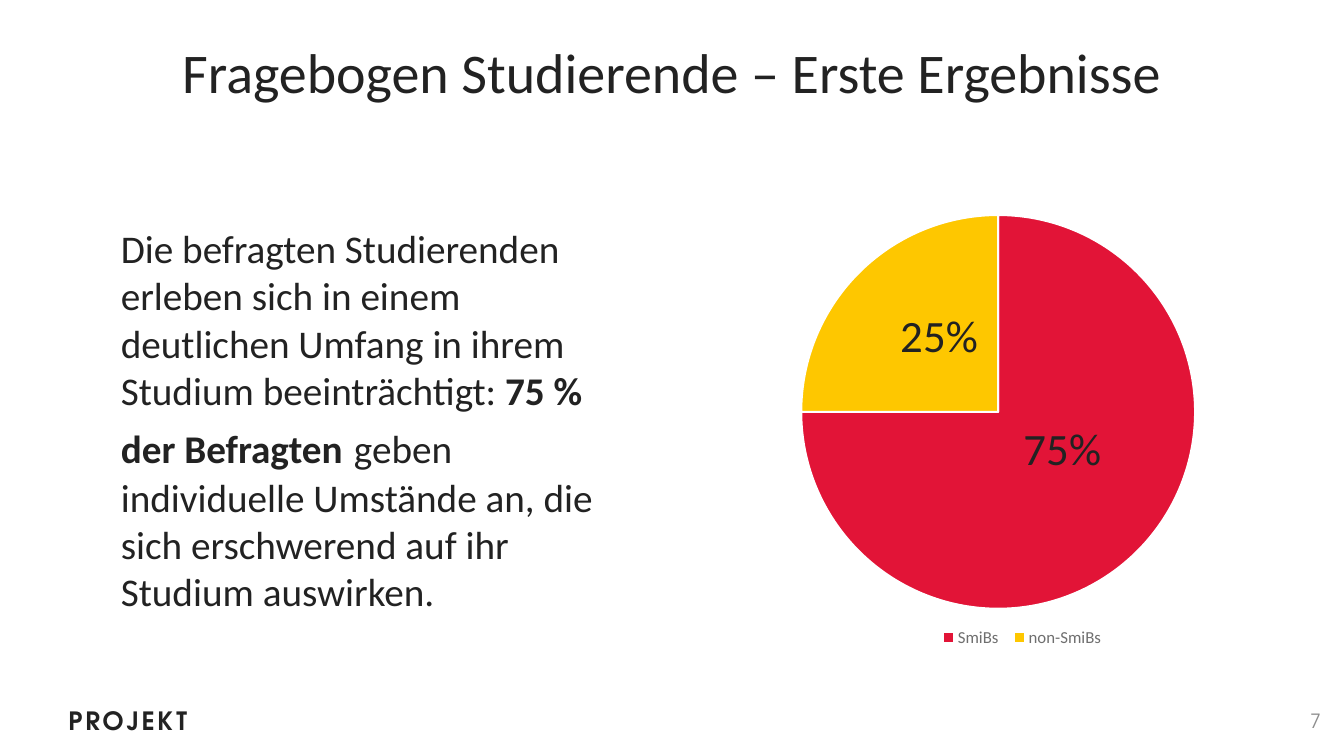
from lxml import etree
from pptx import Presentation
from pptx.chart.data import CategoryChartData
from pptx.dml.color import RGBColor
from pptx.enum.chart import XL_CHART_TYPE as ChartType, XL_LABEL_POSITION as LabelPosition
from pptx.enum.chart import XL_LEGEND_POSITION as LegendPosition
from pptx.enum.text import MSO_ANCHOR as Anchor, PP_ALIGN as Align
from pptx.oxml import parse_xml
from pptx.oxml.ns import nsdecls, qn
from pptx.util import Inches, Pt

INK = RGBColor(0x22, 0x22, 0x22)
LEGEND_GREY = RGBColor(0x6F, 0x6F, 0x6F)
PAGE_GREY = RGBColor(0x8D, 0x8D, 0x8D)
RED = RGBColor(0xE2, 0x14, 0x37)
YELLOW = RGBColor(0xFE, 0xC7, 0x00)
WHITE = RGBColor(0xFF, 0xFF, 0xFF)
BODY_FONT = "Calibri"
BRAND_FONT = "TeX Gyre Adventor"


def add_text(spans, left, top, width, height, font=BODY_FONT, color=INK,
             align=Align.LEFT, anchor=Anchor.TOP, line_spacing=None, wrap=True, tracking=None):
    """Add a one-paragraph text box; spans are (text, size, bold), tracking is in points."""
    box = page.shapes.add_textbox(Inches(left), Inches(top), Inches(width), Inches(height))
    frame = box.text_frame
    frame.word_wrap = wrap
    frame.vertical_anchor = anchor
    para = frame.paragraphs[0]
    para.alignment = align
    para.line_spacing = line_spacing
    for text, size, bold in spans:
        span = para.add_run()
        span.text = text
        span.font.name = font
        span.font.size = Pt(size)
        span.font.bold = bold
        span.font.color.rgb = color
        if tracking:
            span.font._element.set("spc", str(tracking * 100))


def set_layout(parent, predecessor, **settings):
    """Put a manual layout, its settings in schema order, behind predecessor or first in parent."""
    for old_layout in parent.findall(qn("c:layout")):
        parent.remove(old_layout)
    layout = parse_xml(f"<c:layout {nsdecls('c')}><c:manualLayout/></c:layout>")
    for name, value in settings.items():
        etree.SubElement(layout[0], qn(f"c:{name}")).set("val", str(value))
    if predecessor is None:
        parent.insert(0, layout)
    else:
        parent.find(qn(predecessor)).addnext(layout)


deck = Presentation()
deck.slide_width = Inches(13.33)
deck.slide_height = Inches(7.5)
page = deck.slides.add_slide(deck.slide_layouts[6])

add_text([("PROJEKT", 18, True)], 0.58, 6.95, 1.51, 0.4,
         font=BRAND_FONT, wrap=False, tracking=2)
add_text([("Fragebogen Studierende – Erste Ergebnisse", 40, False)], 0.38, 0.4, 12.56, 0.74,
         align=Align.CENTER, line_spacing=0.9)
add_text([
    ("Die befragten Studierenden erleben sich in einem deutlichen Umfang "
     "in ihrem Studium beeinträchtigt: ", 28, False),
    ("75 % der Befragten", 28, True),
    (" ", 36, False),
    ("geben individuelle Umstände an, die sich erschwerend auf ihr Studium auswirken.", 28, False),
], 1.1, 2.18, 5.19, 4.41)

# Pie of impaired and other students: name, share, colour, label shift
slices = [
    ("SmiBs", 75, RED, -0.01, -0.06),
    ("non-SmiBs", 25, YELLOW, 0.02, -0.01),
]
data = CategoryChartData()
data.categories = [name for name, *_ in slices]
data.add_series("Series 1", [share for _, share, *_ in slices])
chart = page.shapes.add_chart(ChartType.PIE, Inches(7.22), Inches(1.56),
                              Inches(5.36), Inches(5.21), data).chart
chart.has_title = False
chart.font.name = BODY_FONT
chart.font.size = Pt(10)
chart.font.color.rgb = INK
set_layout(chart._chartSpace.chart.plotArea, None, layoutTarget="inner",
           xMode="edge", yMode="edge", x=0.13, y=0.11, w=0.74, h=0.75)

chart.has_legend = True
legend = chart.legend
legend.position = LegendPosition.BOTTOM
legend.include_in_layout = False
legend.font.name = BODY_FONT
legend.font.size = Pt(12)
legend.font.color.rgb = LEGEND_GREY
set_layout(legend._element, "c:legendPos", xMode="edge", yMode="edge",
           x=0.38, y=0.89, w=0.33, h=0.05)

plot = chart.plots[0]
plot.vary_by_categories = True
for index, (_, share, color, shift_x, shift_y) in enumerate(slices):
    point = plot.series[0].points[index]
    point.format.fill.solid()
    point.format.fill.fore_color.rgb = color
    point.format.line.color.rgb = WHITE
    point.format.line.width = Pt(1.5)

    label = point.data_label
    span = label.text_frame.paragraphs[0].add_run()
    span.text = f"{share}%"
    span.font.name = BODY_FONT
    span.font.size = Pt(32)
    span.font.bold = False
    span.font.color.rgb = INK
    label.position = LabelPosition.CENTER
    set_layout(label._dLbl, "c:idx", x=shift_x, y=shift_y)

add_text([("7", 14, False)], 10.2, 6.95, 3, 0.4, font=BRAND_FONT, color=PAGE_GREY,
         align=Align.RIGHT, anchor=Anchor.MIDDLE)

deck.save("out.pptx")
